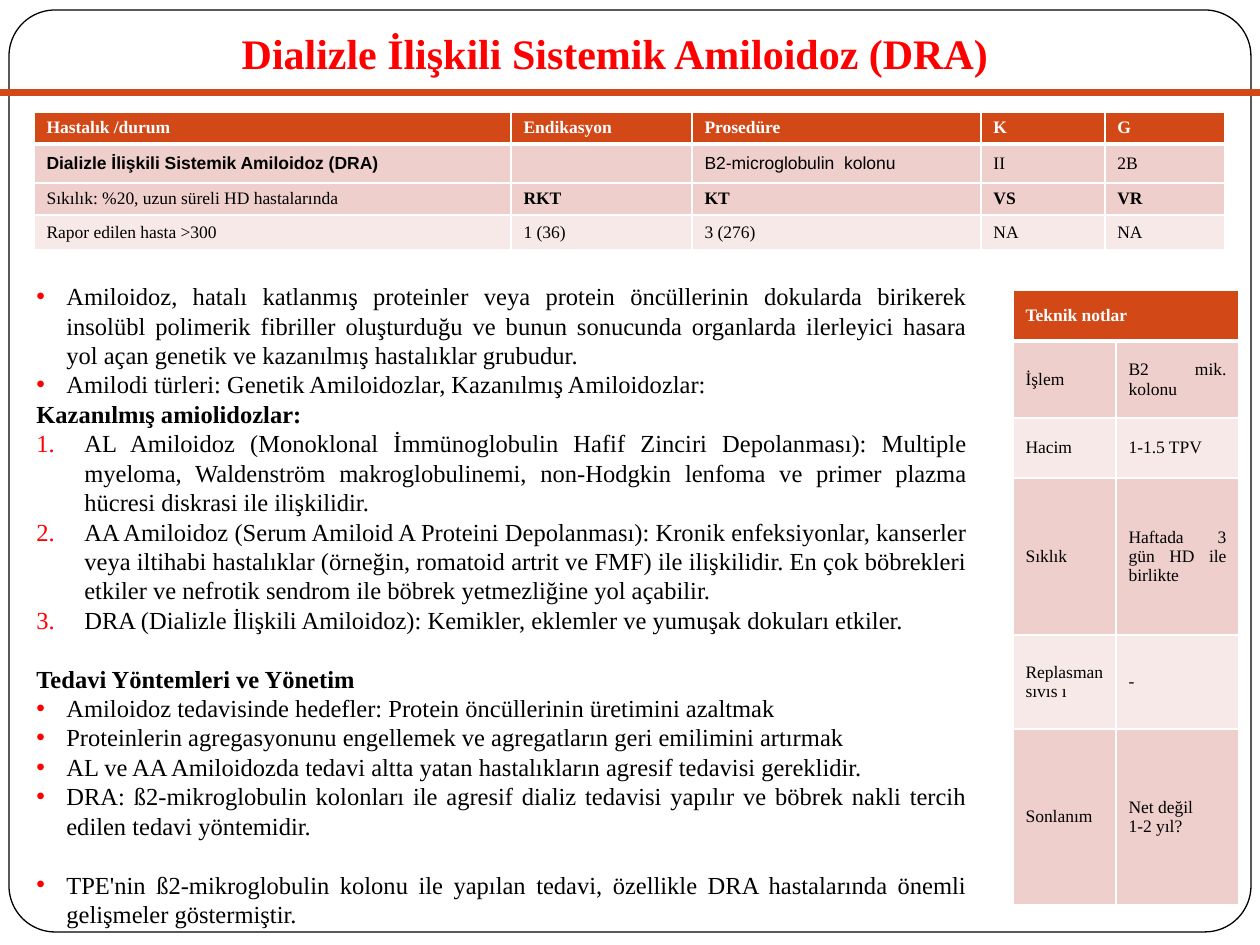
from dataclasses import dataclass

from lxml.etree import SubElement
from pptx import Presentation
from pptx.dml.color import RGBColor
from pptx.enum.shapes import MSO_CONNECTOR as Conn, MSO_SHAPE as Shape
from pptx.enum.text import MSO_ANCHOR as Anchor, PP_ALIGN as Align
from pptx.oxml import parse_xml
from pptx.oxml.ns import nsdecls, qn
from pptx.util import Emu, Pt

SERIF, SANS = "Times New Roman", "Arial"
RED, BLACK, WHITE = "FF0000", "000000", "FFFFFF"
RUST, DARK, PALE = "D34817", "EFCFCC", "F7E9E7"
TITLE = "Dializle İlişkili Sistemik Amiloidoz (DRA)"


@dataclass
class Item:
    text: str
    kind: str = "dot"  # dot, num or head
    gap: float = 0


@dataclass
class Grid:
    x: int
    y: int
    cols: list[int]
    rows: list[int]
    cells: list[list[str]]
    fills: list[str]
    bold: set[tuple[int, int]]
    sans: set[tuple[int, int]]


def px(n: int) -> Emu:
    return Emu(round(n * 914400 / 126))


def color(code: str) -> RGBColor:
    return RGBColor.from_string(code)


def put(obj, **vals) -> None:
    for name, val in vals.items():
        setattr(obj, name, val)


def write(par, text: str, size: int, hue: str = BLACK, bold: bool = False,
          face: str = SERIF) -> None:
    run = par.add_run()
    run.text = text
    put(run.font, size=Pt(size), name=face, bold=bold)
    run.font.color.rgb = color(hue)


def add_box(slide, x: int, y: int, w: int, h: int, **fmt):
    frame = slide.shapes.add_textbox(px(x), px(y), px(w), px(h)).text_frame
    put(frame, word_wrap=True, **fmt)
    return frame


def add_mark(par, kind: str) -> None:
    dent = px({"dot": 30, "num": 48}[kind])
    prop = par._p.get_or_add_pPr()
    prop.set("marL", str(dent))
    prop.set("indent", str(-dent))
    hue = SubElement(prop, qn("a:buClr"))
    SubElement(hue, qn("a:srgbClr"), val=RED)
    if kind == "dot":
        SubElement(prop, qn("a:buFont"), typeface=SANS)
        SubElement(prop, qn("a:buChar"), char="•")
    else:
        SubElement(prop, qn("a:buFont"), typeface=SERIF)
        SubElement(prop, qn("a:buAutoNum"), type="arabicPeriod")


def add_list(frame, items: list[Item]) -> None:
    for i, item in enumerate(items):
        par = frame.add_paragraph() if i else frame.paragraphs[0]
        put(par, alignment=Align.JUSTIFY, line_spacing=1.0,
            space_before=Pt(item.gap))
        if item.kind != "head":
            add_mark(par, item.kind)
        write(par, item.text, 14, bold=item.kind == "head")


def add_edges(cell, row: int) -> None:
    wide = {"T": 3 if row == 1 else 1, "B": 3 if row == 0 else 1}
    prop = cell._tc.get_or_add_tcPr()
    for i, side in enumerate("LRTB"):
        prop.insert(i, parse_xml(
            f'<a:ln{side} {nsdecls("a")} w="{Pt(wide.get(side, 1))}">'
            f'<a:solidFill><a:srgbClr val="{WHITE}"/></a:solidFill></a:ln{side}>'))


def fill_cell(cell, grid: Grid, r: int, c: int) -> None:
    put(cell, vertical_anchor=Anchor.MIDDLE, margin_top=px(5), margin_bottom=px(5))
    cell.fill.solid()
    cell.fill.fore_color.rgb = color(grid.fills[r])
    add_edges(cell, r)
    for i, line in enumerate(grid.cells[r][c].split("\n")):
        frame = cell.text_frame
        par = frame.add_paragraph() if i else frame.paragraphs[0]
        par.alignment = Align.JUSTIFY
        if line:
            write(par, line, 10, BLACK if r else WHITE, r == 0 or (r, c) in grid.bold,
                  SANS if (r, c) in grid.sans else SERIF)
        else:
            SubElement(par._p, qn("a:endParaRPr"), sz="1000")


def add_grid(slide, grid: Grid):
    table = slide.shapes.add_table(
        len(grid.rows), len(grid.cols), px(grid.x), px(grid.y),
        px(sum(grid.cols)), px(sum(grid.rows))).table
    for col, w in zip(table.columns, grid.cols):
        col.width = px(w)
    for r, h in enumerate(grid.rows):
        table.rows[r].height = px(h)
        for c in range(len(grid.cols)):
            fill_cell(table.cell(r, c), grid, r, c)
    return table


ITEMS = [
    Item("Amiloidoz, hatalı katlanmış proteinler veya protein öncüllerinin dokularda "
         "birikerek insolübl polimerik fibriller oluşturduğu ve bunun sonucunda organlarda "
         "ilerleyici hasara yol açan genetik ve kazanılmış hastalıklar grubudur."),
    Item("Amilodi türleri: Genetik Amiloidozlar, Kazanılmış Amiloidozlar:"),
    Item("Kazanılmış amiolidozlar:", "head"),
    Item("AL Amiloidoz (Monoklonal İmmünoglobulin Hafif Zinciri Depolanması): Multiple "
         "myeloma, Waldenström makroglobulinemi, non-Hodgkin lenfoma ve primer plazma "
         "hücresi diskrasi ile ilişkilidir.", "num"),
    Item("AA Amiloidoz (Serum Amiloid A Proteini Depolanması): Kronik enfeksiyonlar, "
         "kanserler veya iltihabi hastalıklar (örneğin, romatoid artrit ve FMF) ile "
         "ilişkilidir. En çok böbrekleri etkiler ve nefrotik sendrom ile böbrek "
         "yetmezliğine yol açabilir.", "num"),
    Item("DRA (Dializle İlişkili Amiloidoz): Kemikler, eklemler ve yumuşak dokuları "
         "etkiler.", "num"),
    Item("Tedavi Yöntemleri ve Yönetim", "head", 16.8),
    Item("Amiloidoz tedavisinde hedefler: Protein öncüllerinin üretimini azaltmak"),
    Item("Proteinlerin agregasyonunu engellemek ve agregatların geri emilimini artırmak"),
    Item("AL ve AA Amiloidozda tedavi altta yatan hastalıkların agresif tedavisi "
         "gereklidir."),
    Item("DRA: ß2-mikroglobulin kolonları ile agresif dializ tedavisi yapılır ve böbrek "
         "nakli tercih edilen tedavi yöntemidir."),
    Item("TPE'nin ß2-mikroglobulin kolonu ile yapılan tedavi, özellikle DRA hastalarında "
         "önemli gelişmeler göstermiştir.", gap=16.8),
]
CASES = Grid(
    34, 112, [477, 181, 289, 124, 120], [32, 39, 32, 35],
    [["Hastalık /durum", "Endikasyon", "Prosedüre", "K", "G"],
     [TITLE, "", "B2-microglobulin  kolonu", "II", "2B"],
     ["Sıkılık: %20, uzun süreli HD hastalarında", "RKT", "KT", "VS", "VR"],
     ["Rapor edilen hasta >300", "1 (36)", "3 (276)", "NA", "NA"]],
    [RUST, DARK, DARK, PALE],
    bold={(1, 0), (2, 1), (2, 2), (2, 3), (2, 4)}, sans={(1, 0), (1, 2)})
NOTES = Grid(
    1013, 290, [103, 123], [51, 77, 60, 157, 94, 176],
    [["Teknik notlar", ""], ["İşlem", "B2 mik. kolonu"], ["Hacim", "1-1.5 TPV"],
     ["Sıklık", "Haftada 3 gün HD ile birlikte"], ["Replasman sıvıs ı", "-"],
     ["Sonlanım", "Net değil\n1-2 yıl?"]],
    [RUST, DARK, PALE, DARK, PALE, DARK], bold=set(), sans=set())


def main() -> None:
    deck = Presentation()
    put(deck, slide_width=px(1260), slide_height=px(945))
    slide = deck.slides.add_slide(deck.slide_layouts[6])

    # Rounded frame
    frame = slide.shapes.add_shape(Shape.ROUNDED_RECTANGLE, px(9), px(10), px(1242), px(922))
    frame.adjustments[0] = 0.05
    frame.shadow.inherit = False
    frame.fill.solid()
    frame.fill.fore_color.rgb = color(WHITE)
    frame.line.color.rgb = color(BLACK)
    frame.line.width = Pt(0.75)

    # Title and rule
    head = add_box(slide, 25, 0, 1180, 91, vertical_anchor=Anchor.BOTTOM,
                   margin_bottom=px(13)).paragraphs[0]
    head.alignment = Align.CENTER
    write(head, TITLE, 24, RED, True)
    rule = slide.shapes.add_connector(Conn.STRAIGHT, 0, px(93), px(1260), px(93))
    rule.line.color.rgb = color(RUST)
    rule.line.width = Pt(4)
    SubElement(rule._element.spPr, qn("a:effectLst"))

    # Body text and tables
    add_list(add_box(slide, 24, 275, 956, 523), ITEMS)
    add_grid(slide, CASES)
    notes = add_grid(slide, NOTES)
    notes.cell(0, 0).merge(notes.cell(0, 1))

    deck.save("out.pptx")


if __name__ == "__main__":
    main()
